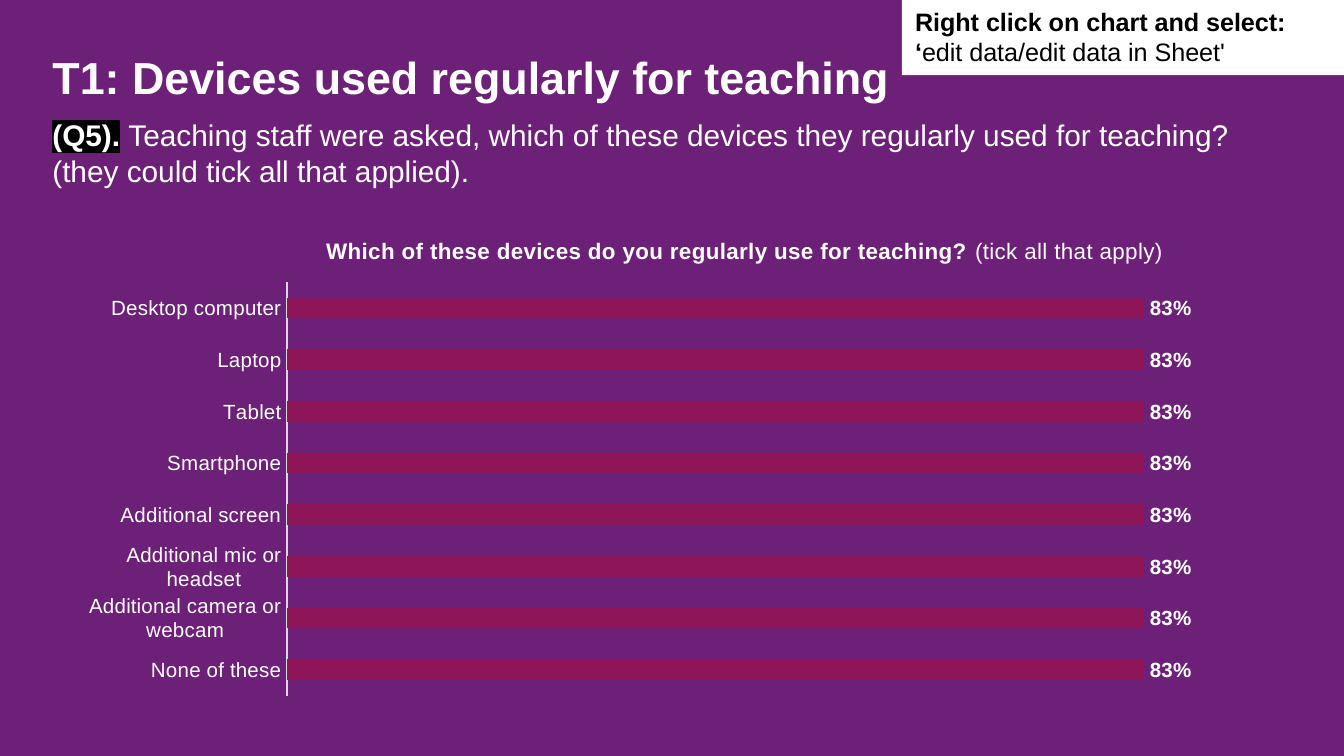
import pptx
import pptx.chart.data
import pptx.dml.color
import pptx.enum.chart
import pptx.enum.shapes
import pptx.enum.text
import pptx.oxml
import pptx.oxml.ns
import pptx.util
from pptx.util import Inches

COLORS = {"purple": "6D2077", "berry": "8E1558", "white": "FFFFFF",
          "black": "000000", "axis": "D9D9D9"}
FONT = "Arial"
DEVICES = ["Desktop computer", "Laptop", "Tablet", "Smartphone",
           "Additional screen", "Additional mic or headset",
           "Additional camera or webcam", "None of these"]
SHARE = 0.83


def rgb(name):
    return pptx.dml.color.RGBColor.from_string(COLORS[name])


def set_attrs(obj, values):
    for name, value in values.items():
        setattr(obj, name, value)


def fill_solid(fill, color):
    fill.solid()
    fill.fore_color.rgb = rgb(color)


def format_font(font, size, color, bold=False):
    set_attrs(font, {"name": FONT, "size": pptx.util.Pt(size), "bold": bold})
    font.color.rgb = rgb(color)


def place(sp, left, top, width, height):
    set_attrs(sp, {"left": Inches(left), "top": Inches(top),
                   "width": Inches(width), "height": Inches(height)})


def format_frame(tf, margins=(0, 0, 0, 0)):
    """Set wrapping, top anchor and margins (left, top, right, bottom)."""
    left, top, right, bottom = map(Inches, margins)
    set_attrs(tf, {
        "word_wrap": True,
        "auto_size": pptx.enum.text.MSO_AUTO_SIZE.NONE,
        "vertical_anchor": pptx.enum.text.MSO_ANCHOR.TOP,
        "margin_left": left, "margin_top": top,
        "margin_right": right, "margin_bottom": bottom})


def add_runs(p, runs, size, color):
    """Add (text, bold) runs and return them."""
    added = []
    for text, bold in runs:
        r = p.add_run()
        r.text = text
        format_font(r.font, size, color, bold)
        added.append(r)
    return added


def highlight(r, color):
    """Put a highlight behind a run; it must follow the run's fill."""
    mark = pptx.oxml.parse_xml(
        f'<a:highlight {pptx.oxml.ns.nsdecls("a")}>'
        f'<a:srgbClr val="{COLORS[color]}"/></a:highlight>')
    fill = r.font._element.find(pptx.oxml.ns.qn("a:solidFill"))
    fill.addnext(mark)


def set_layout(element, index, inner=False, **fractions):
    """Place a chart part by fractions of the chart's size."""
    for old in element.findall(pptx.oxml.ns.qn("c:layout")):
        element.remove(old)
    target = '<c:layoutTarget val="inner"/>' if inner else ""
    modes = "".join(f'<c:{k}Mode val="edge"/>' for k in "xy")
    sizes = "".join(f'<c:{k} val="{v}"/>' for k, v in fractions.items())
    element.insert(index, pptx.oxml.parse_xml(
        f'<c:layout {pptx.oxml.ns.nsdecls("c")}><c:manualLayout>'
        f'{target}{modes}{sizes}</c:manualLayout></c:layout>'))


def add_title(s, text):
    sp = s.shapes.title
    place(sp, 0.39, 0.37, 7.13, 0.37)
    format_frame(sp.text_frame)
    p = sp.text_frame.paragraphs[0]
    p.alignment = pptx.enum.text.PP_ALIGN.LEFT
    add_runs(p, [(text, True)], 24, "white")


def add_question(s, number, text):
    sp = s.shapes.add_textbox(Inches(0.39), Inches(0.87), Inches(9.04), Inches(0.63))
    format_frame(sp.text_frame)
    p = sp.text_frame.paragraphs[0]
    runs = add_runs(p, [(number, True), (" ", True), (text, False)], 16, "white")
    highlight(runs[0], "black")


def add_instruction(s, runs):
    sp = s.shapes.add_shape(pptx.enum.shapes.MSO_SHAPE.RECTANGLE,
                            Inches(6.71), 0, Inches(3.29), Inches(0.56))
    sp.shadow.inherit = False
    fill_solid(sp.fill, "white")
    sp.line.fill.background()
    format_frame(sp.text_frame, (0.1, 0.05, 0.1, 0.05))
    p = sp.text_frame.paragraphs[0]
    p.alignment = pptx.enum.text.PP_ALIGN.LEFT
    add_runs(p, runs, 13.5, "black")


def format_axes(chart):
    xl = pptx.enum.chart
    axis = chart.category_axis
    set_attrs(axis, {"reverse_order": True, "has_major_gridlines": False,
                     "major_tick_mark": xl.XL_TICK_MARK.NONE,
                     "minor_tick_mark": xl.XL_TICK_MARK.NONE})
    format_font(axis.tick_labels.font, 11, "white")
    axis.format.line.color.rgb = rgb("axis")
    axis.format.line.width = pptx.util.Pt(0.75)
    set_attrs(chart.value_axis, {"minimum_scale": 0, "maximum_scale": 0.9,
                                 "has_major_gridlines": False, "visible": False})


def add_device_chart(s):
    xl = pptx.enum.chart
    data = pptx.chart.data.CategoryChartData(number_format="0%")
    data.categories = DEVICES
    data.add_series("Series 1", [SHARE] * len(DEVICES))
    chart = s.shapes.add_chart(xl.XL_CHART_TYPE.BAR_CLUSTERED, Inches(0.47), Inches(1.63),
                               Inches(8.76), Inches(3.62), data).chart
    chart.has_legend = False
    format_font(chart.font, 10, "black")
    format_axes(chart)

    title = chart.chart_title
    title.include_in_layout = False
    runs = add_runs(title.text_frame.paragraphs[0],
                    [("Which of these devices do you regularly use for teaching? ", True),
                     ("(tick all that apply)", False)], 12, "white")
    for r in runs:
        r.font._element.set("spc", "20")
    set_layout(title._element, 1, x=0.22, y=0.03)

    plot = chart.plots[0]
    set_attrs(plot, {"gap_width": 150, "vary_by_categories": False,
                     "has_data_labels": True})
    set_attrs(plot.data_labels, {"show_value": True, "number_format": "0%",
                                 "number_format_is_linked": False,
                                 "position": xl.XL_LABEL_POSITION.OUTSIDE_END})
    format_font(plot.data_labels.font, 11, "white", True)
    fill_solid(plot.series[0].format.fill, "berry")
    plot_area = chart._chartSpace.chart.plotArea
    set_layout(plot_area, 0, inner=True, x=0.19, y=0.13, w=0.79, h=0.85)


def main():
    prs = pptx.Presentation()
    width = Inches(10)
    set_attrs(prs, {"slide_width": width, "slide_height": width * 9 // 16})
    s = prs.slides.add_slide(prs.slide_layouts[5])
    fill_solid(s.background.fill, "purple")
    add_title(s, "T1: Devices used regularly for teaching")
    add_question(s, "(Q5).", "Teaching staff were asked, which of these devices they "
                 "regularly used for teaching? (they could tick all that applied).")
    add_device_chart(s)
    add_instruction(s, [("Right click on chart and select: ‘", True),
                        ("edit data/edit data in Sheet'", False)])
    prs.save("out.pptx")


if __name__ == "__main__":
    main()
